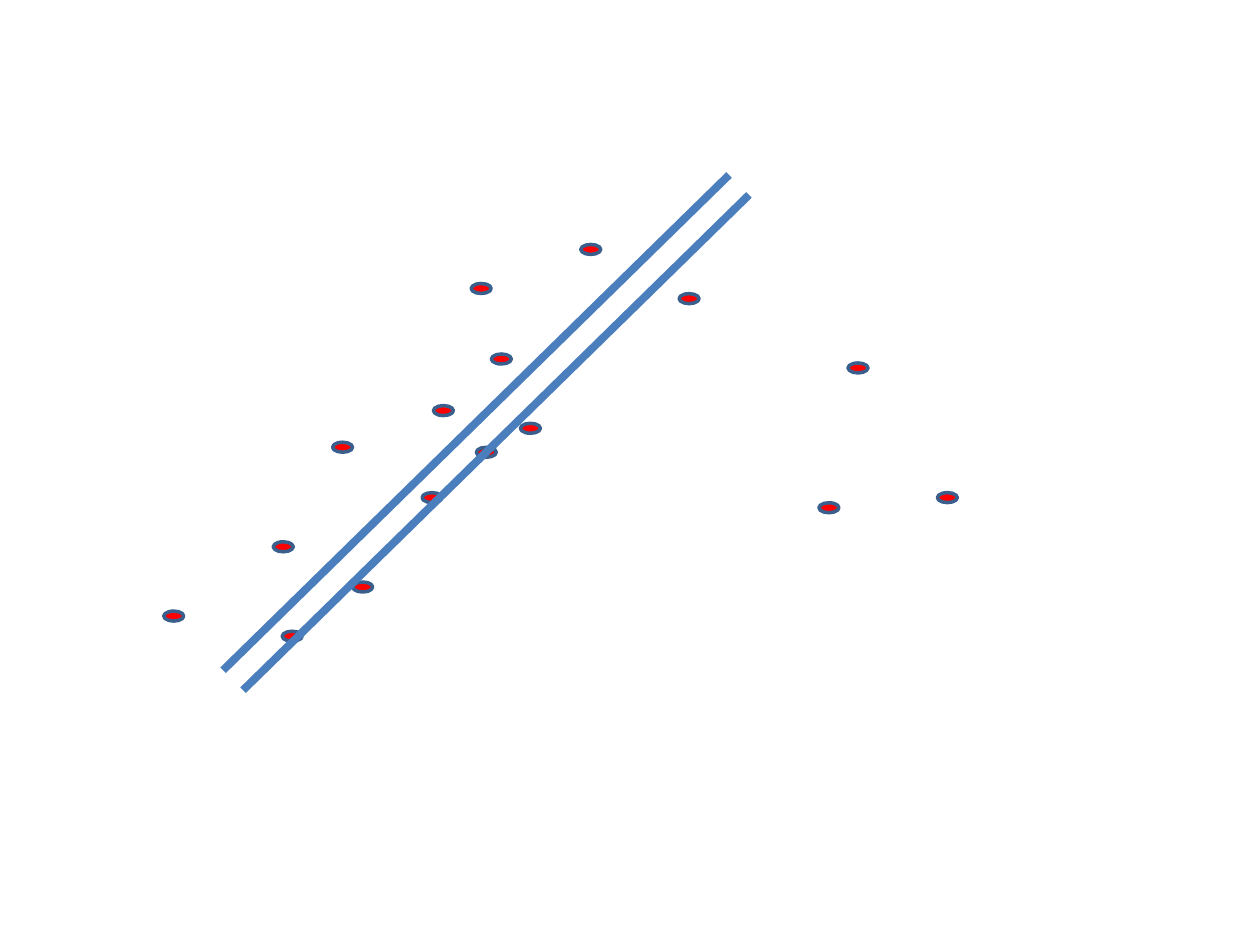
from typing import NamedTuple

from pptx import Presentation
from pptx import util as u
from pptx.dml.color import RGBColor
from pptx.enum import shapes
from pptx.oxml.ns import qn
from lxml import etree


class Dot(NamedTuple):
    left: float
    top: float


class Line(NamedTuple):
    x1: float
    y1: float
    x2: float
    y2: float


DOT_WIDTH, DOT_HEIGHT = 11.4, 5.7
DOTS = [
    Dot(201.6, 332.6), Dot(190.1, 252.7), Dot(93.6, 349.2), Dot(280.8, 202.3),
    Dot(241.2, 281.5), Dot(156.2, 309.6), Dot(484.6, 207.4), Dot(468, 287.3),
    Dot(161.3, 360.7), Dot(297.4, 241.9), Dot(269.3, 162), Dot(535.7, 281.5),
    Dot(247.7, 231.8), Dot(331.9, 139.7), Dot(272.2, 255.6), Dot(388.1, 167.8),
]
UPPER_LINE = Line(127.5, 383, 416.6, 100)
LINE_OFFSET = 11.4


def color(hex_code: str) -> RGBColor:
    return RGBColor.from_string(hex_code)


def draw_dot(slide, dot: Dot) -> None:
    shape = slide.shapes.add_shape(
        shapes.MSO_SHAPE.OVAL,
        u.Pt(dot.left), u.Pt(dot.top), u.Pt(DOT_WIDTH), u.Pt(DOT_HEIGHT))
    shape.shadow.inherit = False
    shape.fill.solid()
    shape.fill.fore_color.rgb = color("FF0000")
    shape.line.color.rgb = color("3A5F8C")
    shape.line.width = u.Pt(2)


def draw_line(slide, line: Line) -> None:
    connector = slide.shapes.add_connector(
        shapes.MSO_CONNECTOR.STRAIGHT, *(u.Pt(value) for value in line))
    connector.line.color.rgb = color("4B7EBC")
    connector.line.width = u.Pt(4.5)
    etree.SubElement(connector._element.spPr, qn("a:effectLst"))


def main() -> None:
    presentation = Presentation()
    presentation.slide_width = u.Pt(720)
    presentation.slide_height = u.Pt(540)
    slide = presentation.slides.add_slide(presentation.slide_layouts[6])

    # Scattered data points
    for dot in DOTS:
        draw_dot(slide, dot)

    # Two parallel lines over the points
    for offset in (0, LINE_OFFSET):
        draw_line(slide, Line(*(value + offset for value in UPPER_LINE)))

    presentation.save("out.pptx")


if __name__ == "__main__":
    main()
